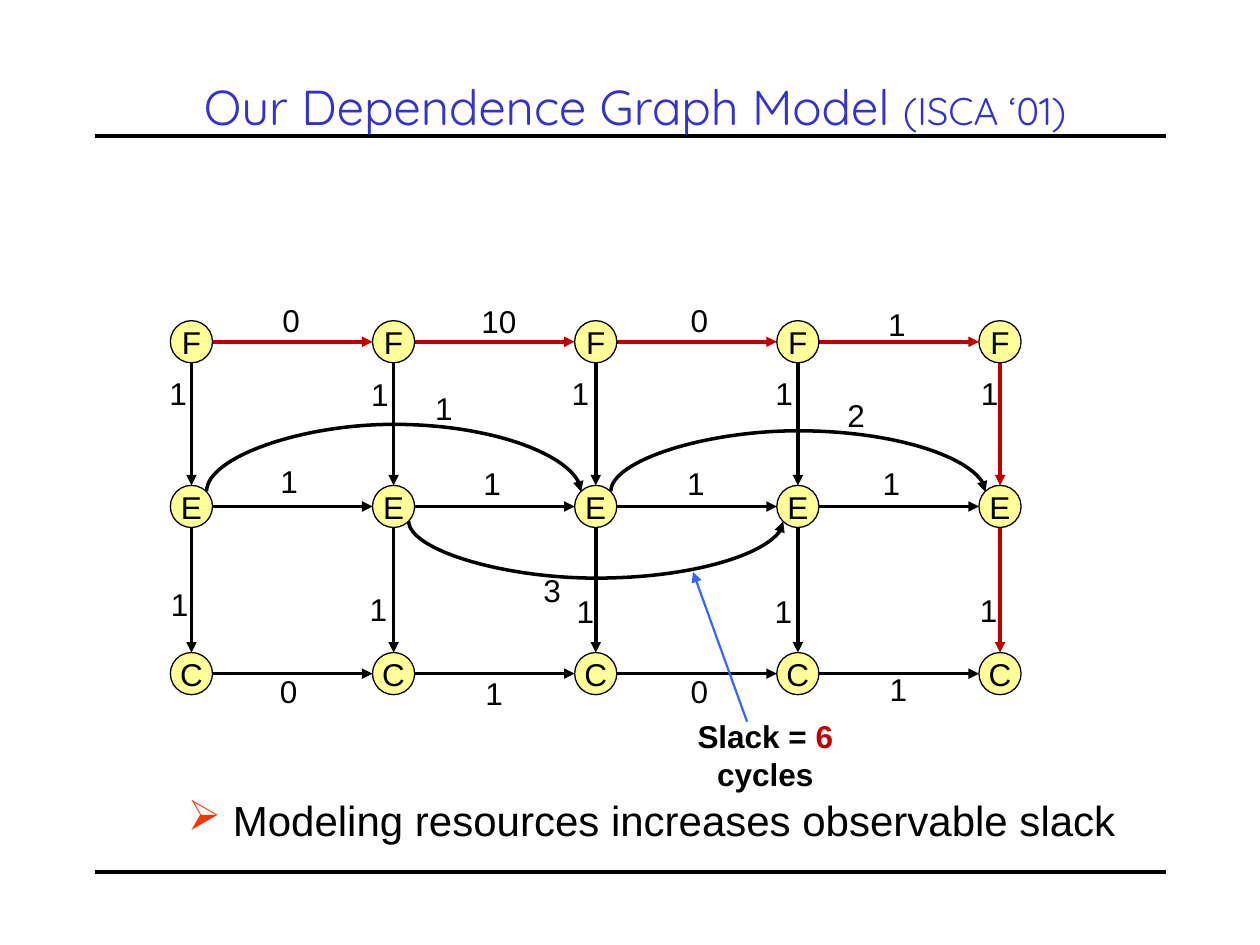
from dataclasses import dataclass

from lxml import etree
from pptx import Presentation
from pptx.dml.color import RGBColor
from pptx.enum.shapes import MSO_CONNECTOR, MSO_SHAPE
from pptx.enum.text import MSO_ANCHOR, PP_ALIGN
from pptx.oxml.ns import qn
from pptx.util import Cm, Pt

STRAIGHT, CURVE = MSO_CONNECTOR.STRAIGHT, MSO_CONNECTOR.CURVE
OVAL = MSO_SHAPE.OVAL
MIDDLE, TOP = MSO_ANCHOR.MIDDLE, MSO_ANCHOR.TOP
CENTER = PP_ALIGN.CENTER


@dataclass(frozen=True)
class Theme:
    ink: str = "000000"
    title: str = "3333CC"
    critical: str = "C00000"
    node: str = "FFFF99"
    pointer: str = "3366FF"
    bullet: str = "FF3300"
    title_font: str = "Quicksand"
    body_font: str = "Arial"
    title_size: float = 28
    source_size: float = 22
    body_size: float = 24
    label_size: float = 18


THEME = Theme()


@dataclass(frozen=True)
class Run:
    text: str
    color: str = THEME.ink
    size: float = THEME.label_size
    font: str = THEME.body_font
    bold: bool = False


@dataclass(frozen=True)
class Label:
    text: str
    x: float
    y: float


@dataclass(frozen=True)
class Stage:
    letter: str
    y: float
    edge_color: str


@dataclass(frozen=True)
class Arc:
    start_column: int
    bend: float  # negative bends upwards


# Graph grid in centimetres
COLUMNS = [3.86 + 4.075 * index for index in range(5)]
RADIUS = 0.425
CORNER = 0.3
STAGES = [
    Stage("F", 6.89, THEME.critical),
    Stage("E", 10.21, THEME.ink),
    Stage("C", 13.58, THEME.ink),
]
ARCS = [Arc(0, -1.35), Arc(1, 1.15), Arc(2, -1.22)]
LABELS = [
    # Along the stages
    Label("0", 5.87, 6.45), Label("10", 10.06, 6.48),
    Label("0", 14.1, 6.45), Label("1", 18.08, 6.53),
    Label("1", 5.83, 9.7), Label("1", 9.92, 9.73),
    Label("1", 14.03, 9.73), Label("1", 17.97, 9.73),
    Label("0", 5.82, 13.94), Label("1", 9.96, 13.97),
    Label("0", 14.1, 13.94), Label("1", 18.11, 13.89),
    # Between the stages
    Label("1", 3.59, 7.92), Label("1", 7.66, 7.95), Label("1", 11.7, 7.92),
    Label("1", 15.81, 7.92), Label("1", 19.95, 7.92),
    Label("1", 3.62, 12.17), Label("1", 7.63, 12.27), Label("1", 11.8, 12.32),
    Label("1", 15.79, 12.32), Label("1", 19.93, 12.29),
    # On the arcs
    Label("1", 8.95, 8.23), Label("3", 11.13, 11.89), Label("2", 17.26, 8.36),
]


def write_runs(shape, runs: list[Run], anchor=TOP, wrap: bool = True):
    frame = shape.text_frame
    frame.word_wrap = wrap
    frame.vertical_anchor = anchor
    paragraph = frame.paragraphs[0]
    paragraph.alignment = CENTER
    for item in runs:
        run = paragraph.add_run()
        run.text = item.text
        formats = {"name": item.font, "size": Pt(item.size), "bold": item.bold}
        for name, value in formats.items():
            setattr(run.font, name, value)
        run.font.color.rgb = RGBColor.from_string(item.color)
    return paragraph


def add_text(slide, left: float, top: float, width: float, height: float,
             runs: list[Run], anchor=TOP):
    box = slide.shapes.add_textbox(Cm(left), Cm(top), Cm(width), Cm(height))
    return write_runs(box, runs, anchor)


def add_line(slide, start: tuple[float, float], end: tuple[float, float],
             color: str = THEME.ink, width: float = 2, arrow: bool = True,
             kind=STRAIGHT):
    connector = slide.shapes.add_connector(
        kind, *(Cm(value) for value in (*start, *end)))
    connector.line.color.rgb = RGBColor.from_string(color)
    connector.line.width = Pt(width)
    properties = connector._element.spPr
    etree.SubElement(properties, qn("a:effectLst"))
    if arrow:
        etree.SubElement(properties.find(qn("a:ln")), qn("a:tailEnd"), type="triangle")
    return connector


def add_node(slide, letter: str, x: float, y: float) -> None:
    node = slide.shapes.add_shape(
        OVAL, Cm(x - RADIUS), Cm(y - RADIUS), Cm(2 * RADIUS), Cm(2 * RADIUS))
    node.shadow.inherit = False
    node.fill.solid()
    node.fill.fore_color.rgb = RGBColor.from_string(THEME.node)
    node.line.color.rgb = RGBColor.from_string(THEME.ink)
    node.line.width = Pt(0.75)
    write_runs(node, [Run(letter)], MIDDLE, wrap=False)


def add_arc(slide, arc: Arc, stage: Stage) -> None:
    """Curve from one node's corner to the node two columns on."""
    upward = arc.bend < 0
    y = stage.y + (-CORNER if upward else CORNER)
    start, end = COLUMNS[arc.start_column] + CORNER, COLUMNS[arc.start_column + 2] - CORNER
    thickness = 0.01
    center, span = (start + end) / 2, end - start
    # The curve is a thin upright box turned on its side
    connector = add_line(slide, (center, y - span / 2),
                         (center + thickness, y + span / 2), kind=CURVE)
    properties = connector._element.spPr
    transform = properties.find(qn("a:xfrm"))
    transform.set("rot", str((90 if upward else 270) * 60000))
    transform.set("flipV" if upward else "flipH", "1")
    adjustments = properties.find(qn("a:prstGeom")).get_or_add_avLst()
    etree.SubElement(adjustments, qn("a:gd"), name="adj1",
                     fmla=f"val {round(arc.bend / thickness * 100000)}")


def add_graph(slide) -> None:
    # Edges along each stage
    for stage in STAGES:
        for left, right in zip(COLUMNS, COLUMNS[1:]):
            add_line(slide, (left + RADIUS, stage.y), (right - RADIUS, stage.y),
                     stage.edge_color)
    # Edges between stages; the last column is on the critical path
    for upper, lower in zip(STAGES, STAGES[1:]):
        for x in COLUMNS:
            color = THEME.critical if x == COLUMNS[-1] else THEME.ink
            add_line(slide, (x, upper.y + RADIUS), (x, lower.y - RADIUS), color)
    for arc in ARCS:
        add_arc(slide, arc, STAGES[1])
    # Nodes and edge weights
    for stage in STAGES:
        for x in COLUMNS:
            add_node(slide, stage.letter, x, stage.y)
    for label in LABELS:
        add_text(slide, label.x - 0.64, label.y - 0.51, 1.28, 1.02, [Run(label.text)])


def main() -> None:
    presentation = Presentation()
    presentation.slide_width, presentation.slide_height = Cm(25.4), Cm(19.05)
    slide = presentation.slides.add_slide(presentation.slide_layouts[6])

    # Rules and title
    for y in (2.75, 17.57):
        add_line(slide, (1.91, y), (23.5, y), width=2.25, arrow=False)
    add_text(slide, 2.11, 1.07, 21.39, 2.13, [
        Run("Our Dependence Graph Model ", THEME.title, THEME.title_size, THEME.title_font),
        Run("(ISCA ‘01)", THEME.title, THEME.source_size, THEME.title_font),
    ], MIDDLE)

    add_graph(slide)

    # Slack callout
    add_line(slide, (15.06, 14.55), (13.97, 11.53), THEME.pointer, 1.25)
    add_text(slide, 12.98, 14.33, 4.9, 1.78, [
        Run("Slack = ", bold=True),
        Run("6 ", THEME.critical, bold=True),
        Run("cycles", bold=True),
    ])

    # Conclusion with an arrow bullet
    conclusion = add_text(slide, 2.44, 15.9, 21.39, 1.27, [
        Run(" Modeling resources increases observable slack", size=THEME.body_size)])
    properties = conclusion._p.get_or_add_pPr()
    bullet_color = etree.SubElement(properties, qn("a:buClr"))
    etree.SubElement(bullet_color, qn("a:srgbClr"), val=THEME.bullet)
    etree.SubElement(properties, qn("a:buChar"), char="➢")

    presentation.save("out.pptx")


if __name__ == "__main__":
    main()
